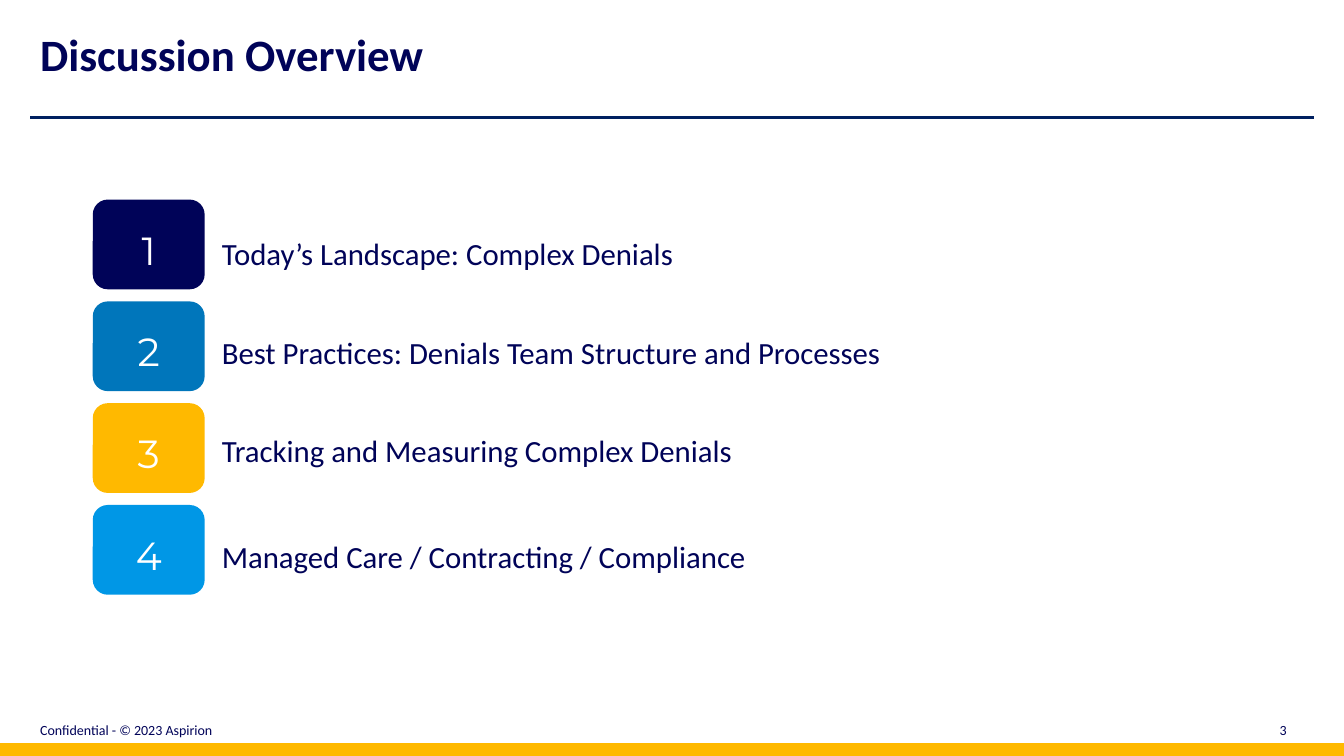
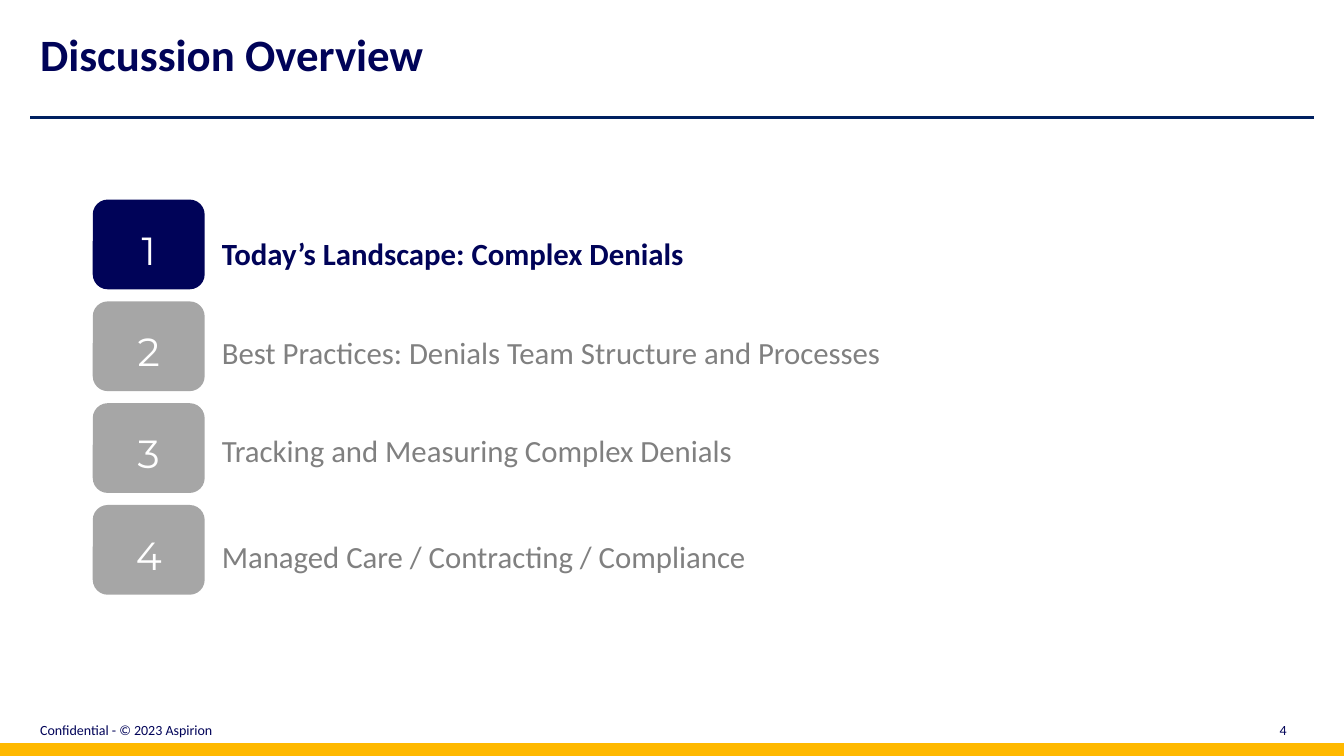
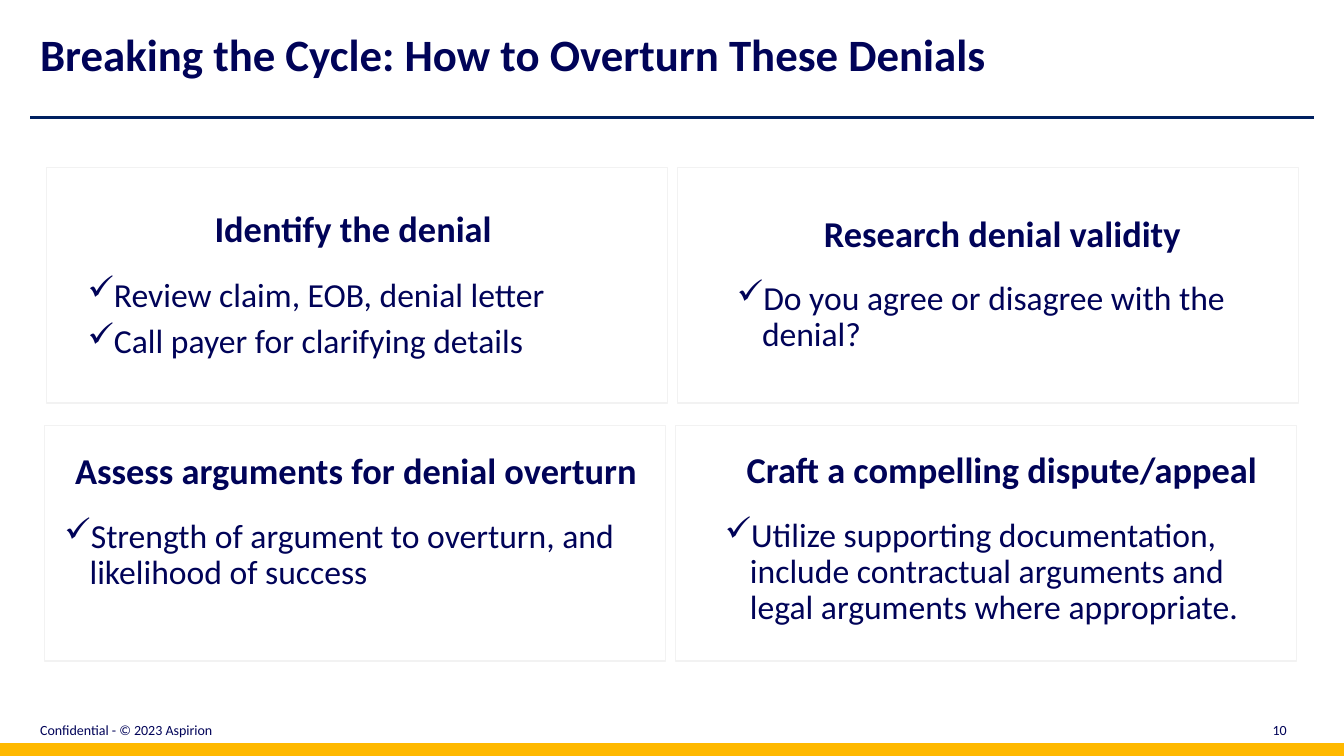
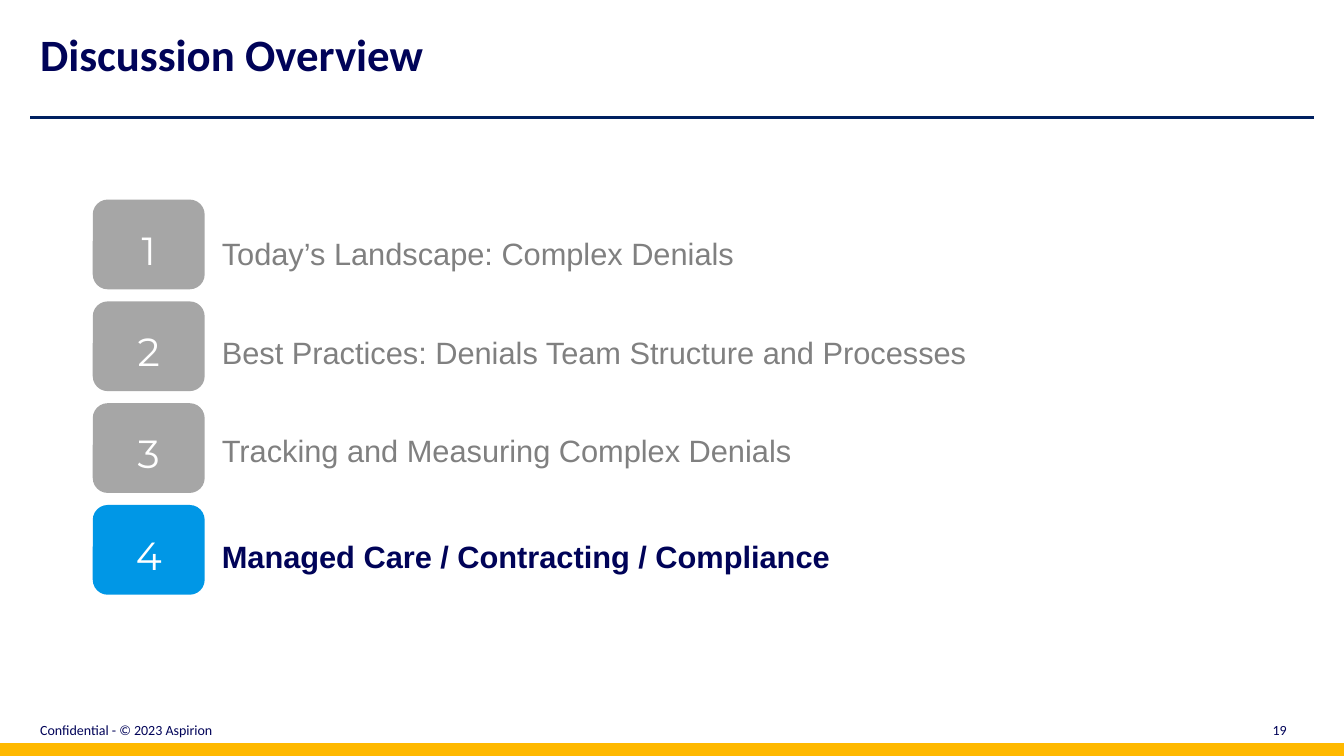
"""Build four slides of a talk on overturning complex denials."""
from dataclasses import dataclass
from typing import Optional

from lxml import etree
from pptx import Presentation
from pptx import util as u
from pptx.dml.color import RGBColor
from pptx.enum import shapes, text
from pptx.oxml.ns import qn
from pptx.shapes.autoshape import Shape
from pptx.slide import Slide
from pptx.text.text import TextFrame

NAVY = RGBColor(0x00, 0x03, 0x58)
RULE_BLUE = RGBColor(0x00, 0x20, 0x60)
MID_BLUE = RGBColor(0x00, 0x76, 0xBB)
SKY_BLUE = RGBColor(0x00, 0x97, 0xE6)
GOLD = RGBColor(0xFF, 0xB9, 0x00)
WHITE = RGBColor(0xFF, 0xFF, 0xFF)
MUTED_FILL = RGBColor(0xA6, 0xA6, 0xA6)
MUTED_TEXT = RGBColor(0x80, 0x80, 0x80)
PANEL_LINE = RGBColor(0xF2, 0xF2, 0xF2)

BODY_FONT = "Calibri"
NUMBER_FONT = "Montserrat"
SLIDE_WIDTH, SLIDE_HEIGHT = 13.33, 7.5
BADGE_LEFT, BADGE_TOP, BADGE_PITCH = 0.92, 1.98, 1.01
BADGE_WIDTH, BADGE_HEIGHT = 1.11, 0.89
PANEL_WIDTH, PANEL_HEIGHT = 6.16, 2.34
HANGING_INDENT = 0.25


@dataclass(frozen=True)
class Box:
    """A rectangle in inches."""

    left: float
    top: float
    width: float
    height: float

    def lengths(self) -> tuple[u.Length, ...]:
        """Return the rectangle as lengths."""
        return tuple(u.Inches(n) for n in (self.left, self.top, self.width, self.height))


@dataclass(frozen=True)
class Topic:
    """One numbered line of the overview."""

    label: str
    label_top: float
    color: RGBColor


@dataclass(frozen=True)
class Panel:
    """One outlined step with a heading and check marks."""

    left: float
    top: float
    text_box: Box
    heading: str
    checks: tuple[str, ...]
    line_spacing: float = 0.9
    heading_gap: float = 19


TOPICS = (
    Topic("Today’s Landscape: Complex Denials", 2.17, NAVY),
    Topic("Best Practices: Denials Team Structure and Processes", 3.15, MID_BLUE),
    Topic("Tracking and Measuring Complex Denials", 4.12, GOLD),
    Topic("Managed Care / Contracting / Compliance", 5.18, SKY_BLUE),
)

PANELS = (
    Panel(0.46, 1.66, Box(0.77, 2.08, 5.47, 1.57), "Identify the denial",
          ("Review claim, EOB, denial letter", "Call payer for clarifying details"),
          line_spacing=0.8, heading_gap=23),
    Panel(6.72, 1.66, Box(7.21, 2.09, 5.47, 1.48), "Research denial validity",
          ("Do you agree or disagree with the denial?",)),
    Panel(0.44, 4.22, Box(0.54, 4.45, 5.99, 1.48), "Assess arguments for denial overturn",
          ("Strength of argument to overturn, and likelihood of success",)),
    Panel(6.7, 4.22, Box(7.09, 4.44, 5.7, 1.84), "Craft a compelling dispute/appeal",
          ("Utilize supporting documentation, include contractual arguments and "
           "legal arguments where appropriate.",)),
)


def write_text(frame: TextFrame, content: str, *, size: float, color: RGBColor = NAVY,
               font: str = BODY_FONT, bold: bool = False,
               align: text.PP_ALIGN = text.PP_ALIGN.LEFT, line_spacing: float = 1.0,
               before: float = 0, after: float = 0, bullet: Optional[str] = None) -> None:
    """Write one formatted paragraph, using the empty first one if there is one."""
    paragraph = frame.paragraphs[0]
    if paragraph.runs:
        paragraph = frame.add_paragraph()
    paragraph.alignment = align
    paragraph.line_spacing = line_spacing
    paragraph.space_before = u.Pt(before)
    paragraph.space_after = u.Pt(after)
    if bullet:
        properties = paragraph._p.get_or_add_pPr()
        indent = u.Inches(HANGING_INDENT)
        properties.set("marL", str(indent))
        properties.set("indent", str(-indent))
        etree.SubElement(properties, qn("a:buChar")).set("char", bullet)
    run = paragraph.add_run()
    run.text = content
    run.font.name = font
    run.font.size = u.Pt(size)
    run.font.bold = bold
    run.font.color.rgb = color


def add_text_box(slide: Slide, box: Box, *, middle: bool = False,
                 inset: bool = True) -> TextFrame:
    """Add a wrapping text box and return its frame."""
    frame = slide.shapes.add_textbox(*box.lengths()).text_frame
    frame.word_wrap = True
    if middle:
        frame.vertical_anchor = text.MSO_ANCHOR.MIDDLE
    if not inset:
        frame.margin_left = frame.margin_right = 0
        frame.margin_top = frame.margin_bottom = 0
    return frame


def add_block(slide: Slide, box: Box, *, fill: Optional[RGBColor] = None,
              line: Optional[RGBColor] = None,
              kind: shapes.MSO_SHAPE = shapes.MSO_SHAPE.RECTANGLE) -> Shape:
    """Add a flat shape with an optional fill and outline."""
    shape = slide.shapes.add_shape(kind, *box.lengths())
    shape.shadow.inherit = False
    if fill is None:
        shape.fill.background()
    else:
        shape.fill.solid()
        shape.fill.fore_color.rgb = fill
    if line is None:
        shape.line.fill.background()
    else:
        shape.line.color.rgb = line
        shape.line.width = u.Pt(1)
    return shape


def add_base_slide(presentation: Presentation, title: str, number: int) -> Slide:
    """Add a blank slide with title, rule, footer and band."""
    slide = presentation.slides.add_slide(presentation.slide_layouts[6])
    write_text(add_text_box(slide, Box(0.3, 7.11, 3, 0.27)),
               "Confidential - © 2023 Aspirion", size=10)
    write_text(add_text_box(slide, Box(8.06, 7.11, 4.8, 0.27)), str(number),
               size=10, align=text.PP_ALIGN.RIGHT)
    rule = slide.shapes.add_connector(
        shapes.MSO_CONNECTOR.STRAIGHT, u.Inches(0.3), u.Inches(1.17),
        u.Inches(13.03), u.Inches(1.17))
    rule.line.color.rgb = RULE_BLUE
    rule.line.width = u.Pt(2.25)
    etree.SubElement(rule._element.spPr, qn("a:effectLst"))
    add_block(slide, Box(0, 7.38, SLIDE_WIDTH, 0.12), fill=GOLD, line=GOLD)
    write_text(add_text_box(slide, Box(0.3, 0.15, 11.5, 0.83), middle=True), title,
               size=32, bold=True, line_spacing=0.9)
    return slide


def add_overview(presentation: Presentation, number: int, *,
                 current: Optional[int] = None, font: str = BODY_FONT) -> None:
    """Add the overview, muting all topics but the current one if given."""
    slide = add_base_slide(presentation, "Discussion Overview", number)
    for index, topic in enumerate(TOPICS):
        muted = current is not None and index != current
        badge = add_block(
            slide, Box(BADGE_LEFT, BADGE_TOP + index * BADGE_PITCH, BADGE_WIDTH, BADGE_HEIGHT),
            fill=MUTED_FILL if muted else topic.color,
            kind=shapes.MSO_SHAPE.ROUNDED_RECTANGLE)
        badge.text_frame.margin_top = u.Inches(0.1)
        badge.text_frame.margin_bottom = 0
        write_text(badge.text_frame, str(index + 1), size=28, color=WHITE,
                   font=NUMBER_FONT, align=text.PP_ALIGN.CENTER)
        label = add_text_box(slide, Box(2.2, topic.label_top, 10.52, 0.5),
                             middle=True, inset=False)
        label.auto_size = text.MSO_AUTO_SIZE.SHAPE_TO_FIT_TEXT
        write_text(label, topic.label, size=22, font=font, bold=index == current,
                   color=MUTED_TEXT if muted else NAVY, line_spacing=1.5, after=10)


def add_steps(presentation: Presentation, number: int) -> None:
    """Add the slide with the four steps to overturn a denial."""
    slide = add_base_slide(
        presentation, "Breaking the Cycle: How to Overturn These Denials", number)
    for panel in PANELS:
        add_block(slide, Box(panel.left, panel.top, PANEL_WIDTH, PANEL_HEIGHT),
                  line=PANEL_LINE)
        frame = add_text_box(slide, panel.text_box)
        write_text(frame, panel.heading, size=26, bold=True,
                   align=text.PP_ALIGN.CENTER, line_spacing=panel.line_spacing)
        for index, check in enumerate(panel.checks):
            write_text(frame, check, size=24, bullet="✓",
                       line_spacing=panel.line_spacing,
                       before=10 if index else panel.heading_gap)


def main() -> None:
    """Build and save the presentation."""
    presentation = Presentation()
    presentation.slide_width = u.Inches(SLIDE_WIDTH)
    presentation.slide_height = u.Inches(SLIDE_HEIGHT)
    add_overview(presentation, 3)
    add_overview(presentation, 4, current=0)
    add_steps(presentation, 10)
    add_overview(presentation, 19, current=3, font="Arial")
    presentation.save("out.pptx")


if __name__ == "__main__":
    main()
